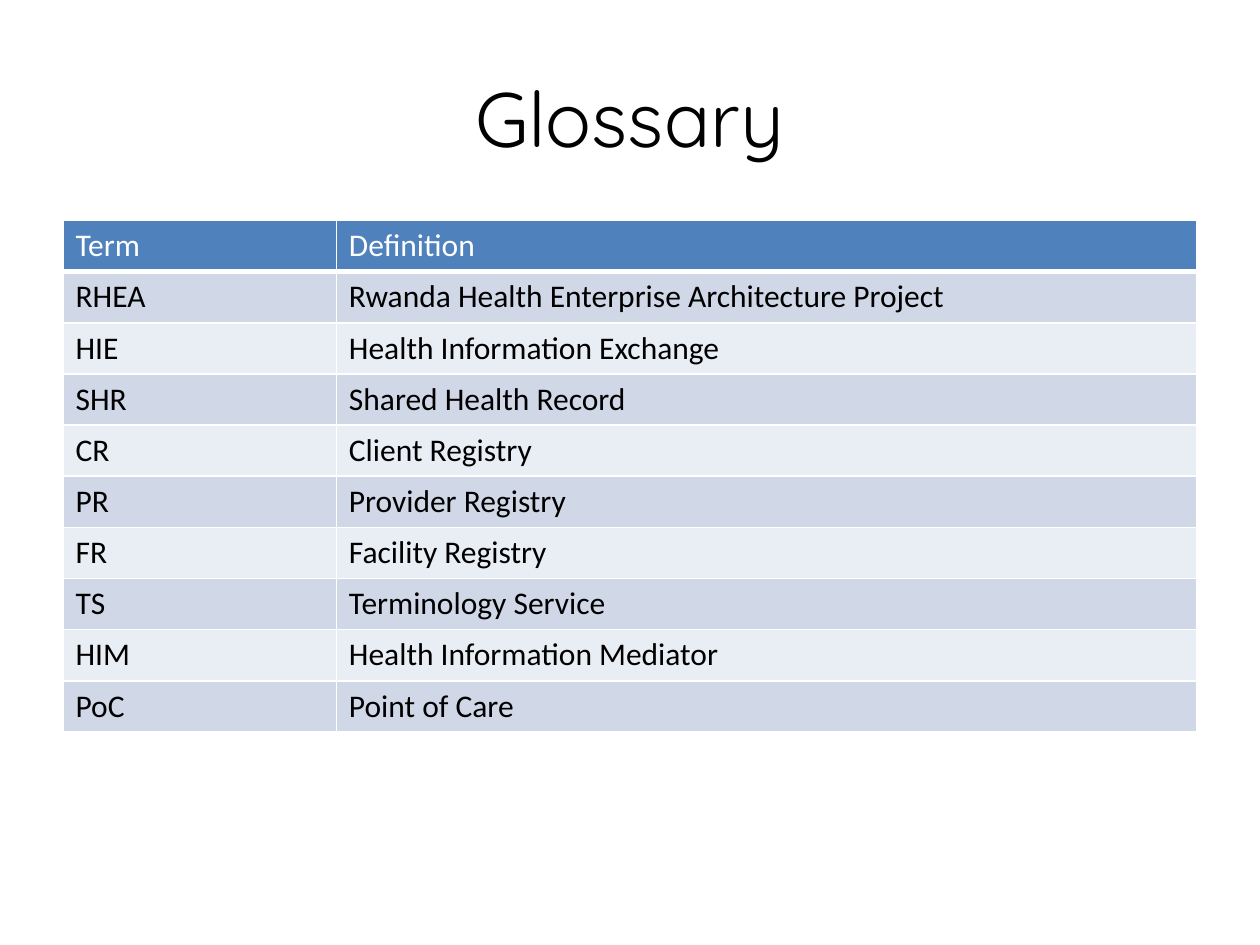
from pptx import Presentation, util as u
from pptx.dml.color import RGBColor
from pptx.enum import text
from lxml import etree

TITLE = "Glossary"
ROWS = [
    ("Term", "Definition"),
    ("RHEA", "Rwanda Health Enterprise Architecture Project"),
    ("HIE", "Health Information Exchange"),
    ("SHR", "Shared Health Record"),
    ("CR", "Client Registry"),
    ("PR", "Provider Registry"),
    ("FR", "Facility Registry"),
    ("TS", "Terminology Service"),
    ("HIM", "Health Information Mediator"),
    ("PoC", "Point of Care"),
]
COLS = (2.17, 6.83)
HIGH = 4.06
HEX = {"head": "4F81BD", "odd": "D0D8E8", "even": "E9EDF4",
       "white": "FFFFFF", "black": "000000"}
NS = "http://schemas.openxmlformats.org/drawingml/2006/main"


def color(name):
    return RGBColor.from_string(HEX[name])


def write(para, words, face, size, tint):
    run = para.add_run()
    run.text = words
    run.font.name = face
    run.font.size = u.Pt(size)
    run.font.bold = False
    run.font.color.rgb = color(tint)


def border(cell, base):
    props = cell._tc.get_or_add_tcPr()
    sides = (("lnL", 1), ("lnR", 1), ("lnT", 1), ("lnB", base))
    for spot, (side, width) in enumerate(sides):
        line = etree.Element(f"{{{NS}}}{side}", w=str(u.Pt(width)))
        fill = etree.SubElement(line, f"{{{NS}}}solidFill")
        etree.SubElement(fill, f"{{{NS}}}srgbClr", val=HEX["white"])
        props.insert(spot, line)


def add_title(slide):
    box = slide.shapes.add_textbox(
        u.Inches(0.5), u.Inches(0.3), u.Inches(9), u.Inches(1.25))
    frame = box.text_frame
    frame.word_wrap = True
    frame.vertical_anchor = text.MSO_ANCHOR.MIDDLE
    para = frame.paragraphs[0]
    para.alignment = text.PP_ALIGN.CENTER
    write(para, TITLE, "Quicksand", 44, "black")


def add_terms(slide):
    table = slide.shapes.add_table(
        len(ROWS), len(COLS), u.Inches(0.5), u.Inches(1.75),
        u.Inches(sum(COLS)), u.Inches(HIGH)).table
    for col, width in zip(table.columns, COLS):
        col.width = u.Inches(width)
    for r, row in enumerate(ROWS):
        band = "head" if r == 0 else "odd" if r % 2 else "even"
        for c, words in enumerate(row):
            cell = table.cell(r, c)
            cell.fill.solid()
            cell.fill.fore_color.rgb = color(band)
            border(cell, 1 if r else 3)
            write(cell.text_frame.paragraphs[0], words, "Calibri", 18,
                  "black" if r else "white")


def main():
    deck = Presentation()
    deck.slide_width, deck.slide_height = u.Inches(10), u.Inches(7.5)
    slide = deck.slides.add_slide(deck.slide_layouts[6])
    add_title(slide)
    add_terms(slide)
    deck.save("out.pptx")


if __name__ == "__main__":
    main()
